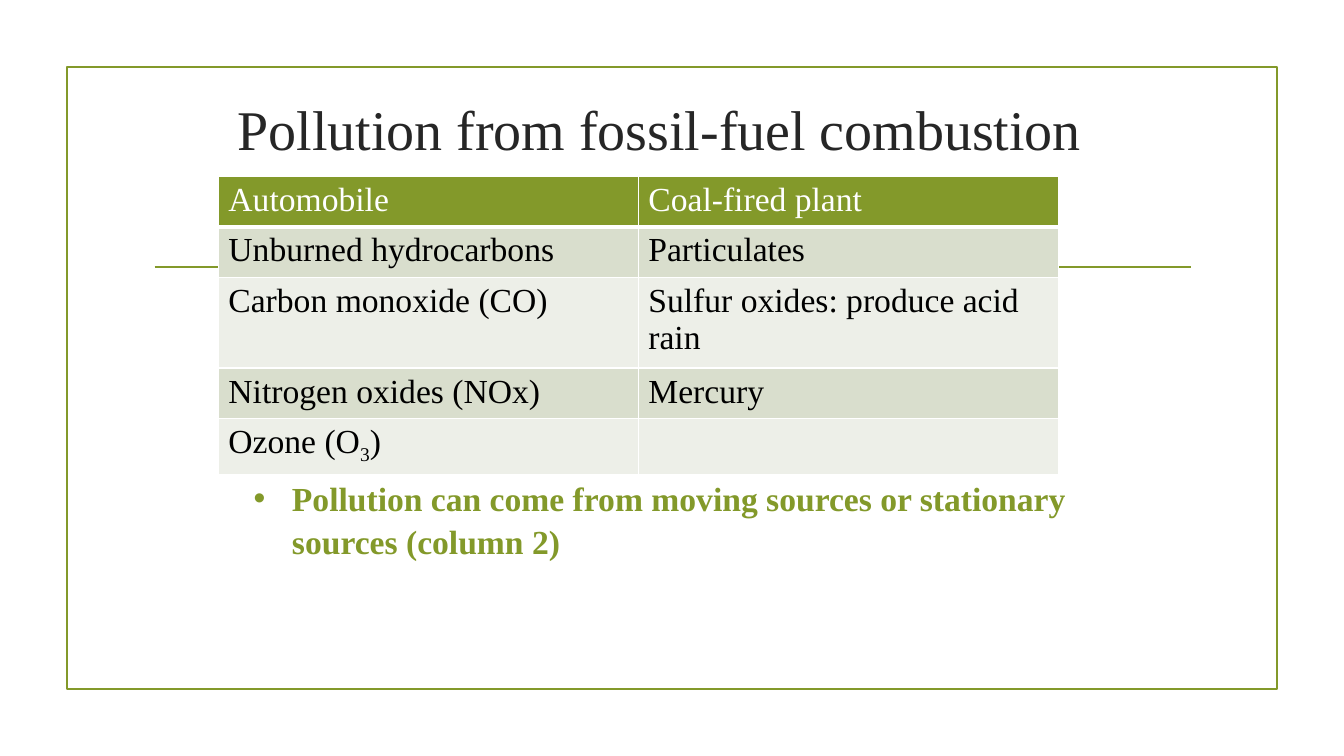
from dataclasses import dataclass

from lxml import etree
from pptx import Presentation, util as u
from pptx.dml.color import RGBColor
from pptx.enum import shapes, text
from pptx.oxml import parse_xml
from pptx.oxml.ns import nsdecls, qn

COLUMNS, ROWS = 160, 90
CELL = u.Inches(7.5) / ROWS
FONT = "Times New Roman"
GREEN, WHITE, BLACK, TITLE_GREY = "83992A", "FFFFFF", "000000", "262626"
BAND_FILLS = ("D9DECD", "EDEFE8")
LINE_WIDTH = 1.25
BORDER_SIDES = ("L", "R", "T", "B")


@dataclass(frozen=True)
class Area:
    """Place and size in grid columns and rows."""
    column: float
    row: float
    columns: float
    rows: float

    def box(self) -> dict[str, int]:
        return {"left": grid(self.column), "top": grid(self.row),
                "width": grid(self.columns), "height": grid(self.rows)}


@dataclass(frozen=True)
class Piece:
    text: str
    baseline: int = 0


@dataclass(frozen=True)
class PollutantRow:
    automobile: tuple[Piece, ...]
    plant: tuple[Piece, ...] = ()


FRAME = Area(8, 8, 144, 74)
RULE = Area(18.4, 31.8, 123.4, 0)
TITLE = Area(18.5, 7.8, 120, 15)
TABLE = Area(26, 21, 100, 24.5)
NOTE = Area(29, 56, 103, 10.9)

POLLUTANTS = (
    PollutantRow((Piece("Automobile"),), (Piece("Coal-fired plant"),)),
    PollutantRow((Piece("Unburned hydrocarbons"),), (Piece("Particulates"),)),
    PollutantRow((Piece("Carbon monoxide (CO)"),),
                 (Piece("Sulfur oxides: produce acid rain"),)),
    PollutantRow((Piece("Nitrogen oxides (NOx)"),), (Piece("Mercury"),)),
    PollutantRow((Piece("Ozone (O"), Piece("3", -25000), Piece(")"))),
)


def grid(steps: float) -> int:
    return round(steps * CELL)


def colour(value: str) -> RGBColor:
    return RGBColor.from_string(value)


def apply(target, values: dict) -> None:
    for name, value in values.items():
        setattr(target, name, value)


def format_font(font, size: float, hex_colour: str, bold: bool = False) -> None:
    apply(font, {"name": FONT, "size": u.Pt(size), "bold": bold})
    font.color.rgb = colour(hex_colour)


def format_line(line) -> None:
    line.color.rgb = colour(GREEN)
    line.width = u.Pt(LINE_WIDTH)


def add_frame(slide) -> None:
    frame = slide.shapes.add_shape(shapes.MSO_SHAPE.RECTANGLE, **FRAME.box())
    frame.shadow.inherit = False
    frame.fill.background()
    format_line(frame.line)


def add_rule(slide) -> None:
    row = grid(RULE.row)
    rule = slide.shapes.add_connector(
        shapes.MSO_CONNECTOR.STRAIGHT, grid(RULE.column), row,
        grid(RULE.column + RULE.columns), row)
    format_line(rule.line)
    etree.SubElement(rule._element.spPr, qn("a:effectLst"))


def fill_title(slide) -> None:
    title = slide.shapes.title
    apply(title, TITLE.box())
    apply(title.text_frame, {"text": "Pollution from fossil-fuel combustion",
                             "auto_size": text.MSO_AUTO_SIZE.NONE,
                             "vertical_anchor": text.MSO_ANCHOR.MIDDLE})
    paragraph = title.text_frame.paragraphs[0]
    paragraph.alignment = text.PP_ALIGN.CENTER
    format_font(paragraph.runs[0].font, 40, TITLE_GREY)


def add_borders(cell, bottom_width: float) -> None:
    """Draw white cell borders; they must precede the fill in the cell's XML."""
    properties = cell._tc.get_or_add_tcPr()
    for position, side in enumerate(BORDER_SIDES):
        width = u.Pt(bottom_width if side == "B" else 1)
        properties.insert(position, parse_xml(
            f'<a:ln{side} {nsdecls("a")} w="{width}"><a:solidFill>'
            f'<a:srgbClr val="{WHITE}"/></a:solidFill></a:ln{side}>'))


def fill_cell(cell, pieces: tuple[Piece, ...], row: int) -> None:
    header = row == 0
    cell.fill.solid()
    cell.fill.fore_color.rgb = colour(GREEN if header else BAND_FILLS[(row - 1) % 2])
    add_borders(cell, 3 if header else 1)
    paragraph = cell.text_frame.paragraphs[0]
    for piece in pieces:
        run = paragraph.add_run()
        run.text = piece.text
        format_font(run.font, 24, WHITE if header else BLACK)
        if piece.baseline:
            run._r.get_or_add_rPr().set("baseline", str(piece.baseline))


def add_pollutant_table(slide) -> None:
    table = slide.shapes.add_table(len(POLLUTANTS), 2, **TABLE.box()).table
    table.horz_banding = False
    for row, pollutant in enumerate(POLLUTANTS):
        for column, pieces in enumerate((pollutant.automobile, pollutant.plant)):
            fill_cell(table.cell(row, column), pieces, row)


def fill_note(slide) -> None:
    note = slide.placeholders[1]
    apply(note, NOTE.box())
    apply(note.text_frame, {
        "text": "Pollution can come from moving sources or stationary sources (column 2)",
        "word_wrap": True,
        "auto_size": text.MSO_AUTO_SIZE.SHAPE_TO_FIT_TEXT})
    paragraph = note.text_frame.paragraphs[0]
    properties = paragraph._p.get_or_add_pPr()
    indent = u.Inches(0.38)
    properties.set("marL", str(indent))
    properties.set("indent", str(-indent))
    etree.SubElement(properties, qn("a:buFont"), typeface="Arial")
    etree.SubElement(properties, qn("a:buChar"), char="•")
    apply(paragraph, {"space_before": u.Pt(0), "line_spacing": 1.06})
    format_font(paragraph.runs[0].font, 24, GREEN, bold=True)


def main() -> None:
    presentation = Presentation()
    apply(presentation, {"slide_width": grid(COLUMNS), "slide_height": grid(ROWS)})
    slide = presentation.slides.add_slide(presentation.slide_layouts[1])
    add_frame(slide)
    add_rule(slide)
    fill_title(slide)
    add_pollutant_table(slide)
    fill_note(slide)
    presentation.save("out.pptx")


if __name__ == "__main__":
    main()
